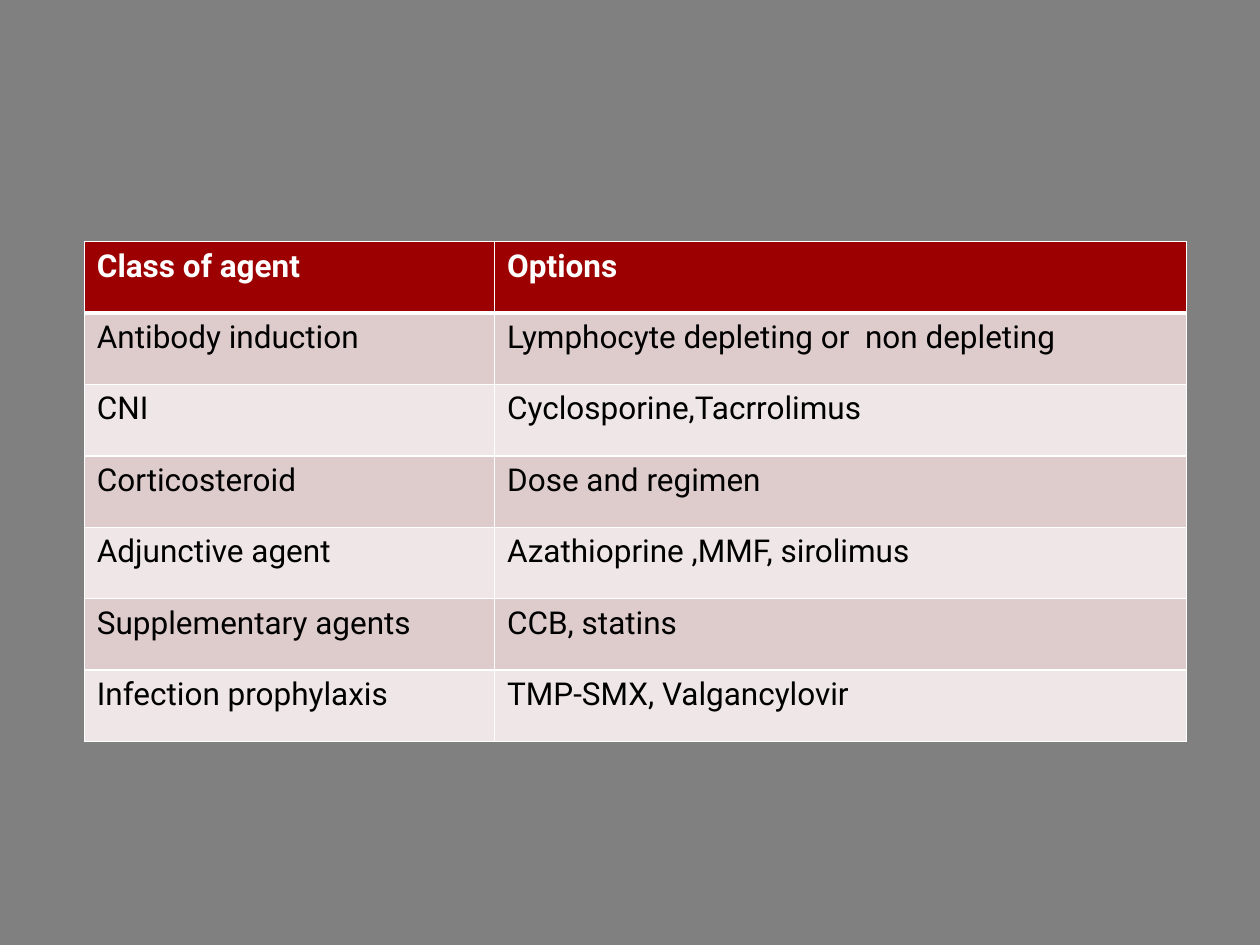
from dataclasses import dataclass

from lxml.etree import SubElement
from pptx import Presentation
from pptx.dml.color import RGBColor as Rgb
from pptx.oxml.ns import qn
from pptx.util import Cm, Pt


@dataclass(frozen=True)
class Theme:
    font: str = "Roboto"
    size: int = 18
    background: str = "808080"
    header_fill: str = "9C0001"
    header_text: str = "FFFFFF"
    body_text: str = "000000"
    bands: tuple = ("DECCCC", "EFE7E7")
    rule: str = "FFFFFF"
    thin: int = 1
    thick: int = 3


AGENTS = [
    ("Class of agent", "Options"),
    ("Antibody induction", "Lymphocyte depleting or  non depleting"),
    ("CNI", "Cyclosporine,Tacrrolimus"),
    ("Corticosteroid", "Dose and regimen"),
    ("Adjunctive agent", "Azathioprine ,MMF, sirolimus"),
    ("Supplementary agents", "CCB, statins"),
    ("Infection prophylaxis", "TMP-SMX, Valgancylovir"),
]


class SlideBuilder:
    def __init__(self, slide, theme):
        self.slide = slide
        self.theme = theme

    def background(self):
        fill = self.slide.background.fill
        fill.solid()
        fill.fore_color.rgb = Rgb.from_string(self.theme.background)

    def borders(self, cell, top, bottom):
        # Border lines come before the fill in the cell properties
        properties = cell._tc.get_or_add_tcPr()
        thin = self.theme.thin
        for side, width in (("L", thin), ("R", thin), ("T", top), ("B", bottom)):
            line = SubElement(properties, qn(f"a:ln{side}"), w=str(Pt(width)))
            paint = SubElement(line, qn("a:solidFill"))
            SubElement(paint, qn("a:srgbClr"), val=self.theme.rule)

    def cell(self, cell, text, row):
        theme = self.theme
        header = row == 0
        self.borders(cell,
                     top=theme.thick if row == 1 else theme.thin,
                     bottom=theme.thick if header else theme.thin)
        fill = theme.header_fill if header else theme.bands[(row - 1) % 2]
        cell.fill.solid()
        cell.fill.fore_color.rgb = Rgb.from_string(fill)
        run = cell.text_frame.paragraphs[0].add_run()
        run.text = text
        run.font.name = theme.font
        run.font.size = Pt(theme.size)
        run.font.bold = header
        color = theme.header_text if header else theme.body_text
        run.font.color.rgb = Rgb.from_string(color)

    def table(self, rows, left, top, widths, row_height):
        table = self.slide.shapes.add_table(
            len(rows), len(widths), Cm(left), Cm(top),
            Cm(sum(widths)), Cm(row_height * len(rows))).table
        for column, width in zip(table.columns, widths):
            column.width = Cm(width)
        for r, texts in enumerate(rows):
            table.rows[r].height = Cm(row_height)
            for c, text in enumerate(texts):
                self.cell(table.cell(r, c), text, r)


def main():
    deck = Presentation()
    deck.slide_width, deck.slide_height = Cm(25.4), Cm(19.05)
    blank = deck.slide_layouts[6]
    builder = SlideBuilder(deck.slides.add_slide(blank), Theme())

    builder.background()
    # Agent classes and their options
    builder.table(AGENTS, left=1.7, top=4.87, widths=(8.27, 13.95), row_height=1.44)

    deck.save("out.pptx")


if __name__ == "__main__":
    main()
